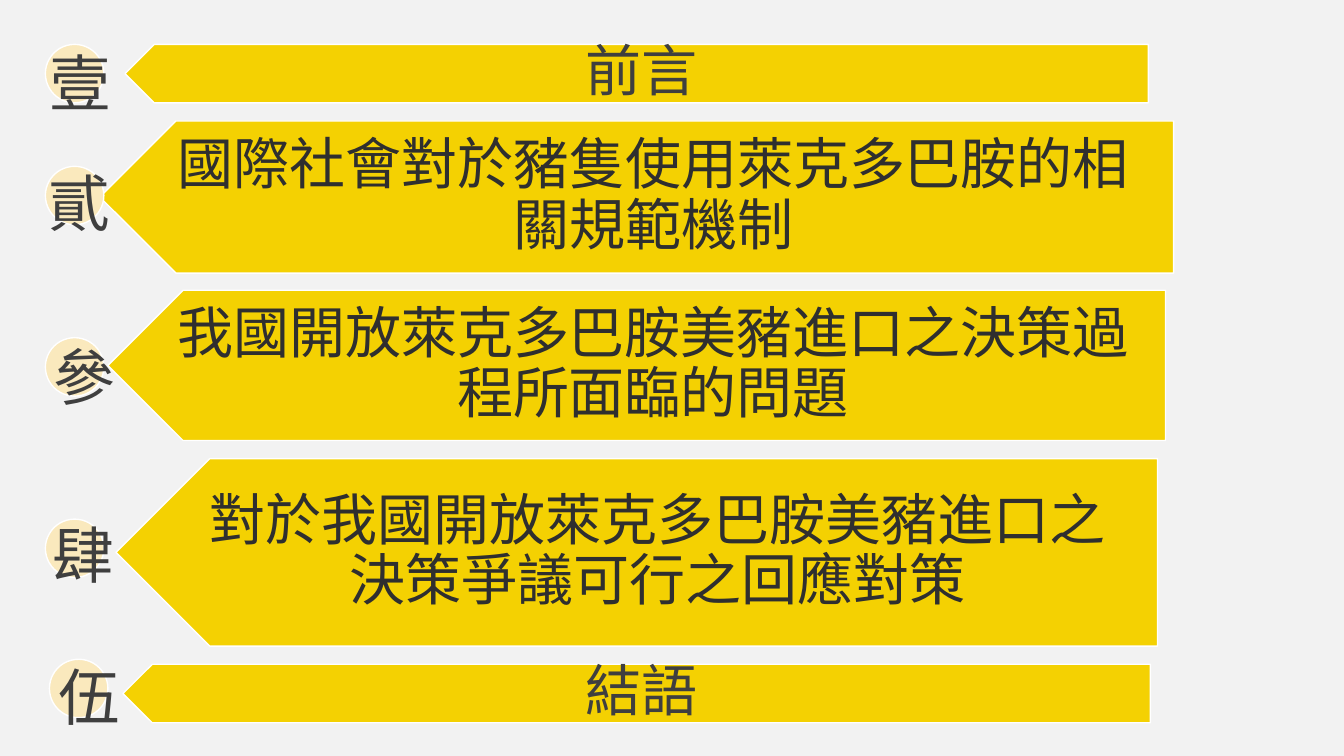
from pptx import Presentation
from pptx.dml.color import RGBColor
from pptx.enum.shapes import MSO_SHAPE
from pptx.enum.text import MSO_ANCHOR, MSO_AUTO_SIZE, PP_ALIGN
from pptx.oxml.ns import qn
from pptx.util import Inches, Pt
from lxml.etree import SubElement

COLOURS = {
    "background": "F2F2F2",
    "banner": "F4D102",
    "dot": "FAE9BD",
    "outline": "FFFFFF",
    "label": "3F3F3F",
    "heading": "2F2F2F",
}
CJK_FONT = "Noto Sans CJK SC"
DOT_SIZE = 0.58

CHAPTERS = [
    ("壹", (0.39, 0.40, 1.11), (0.45, 0.44), (1.24, 0.44, 10.15, 0.58),
     "前言", CJK_FONT, "label"),
    ("貳", (0.38, 1.59, 0.69), (0.45, 1.65), (0.99, 1.20, 10.65, 1.51),
     "國際社會對於豬隻使用萊克多巴胺的相關規範機制", "Arial", "heading"),
    ("參", (0.43, 3.31, 0.69), (0.45, 3.35), (1.07, 2.88, 10.49, 1.49),
     "我國開放萊克多巴胺美豬進口之決策過程所面臨的問題", "Arial", "heading"),
    ("肆", (0.42, 5.08, 0.69), (0.45, 5.15), (1.15, 4.55, 10.33, 1.86),
     "對於我國開放萊克多巴胺美豬進口之決策爭議可行之回應對策", "Arial", "heading"),
    ("伍", (0.48, 6.49, 0.69), (0.49, 6.54), (1.22, 6.59, 10.19, 0.58),
     "結語", CJK_FONT, "label"),
]


class AgendaSlide:
    """Draws the agenda elements in one style on the current page."""

    def __init__(self, page):
        self.page = page
        fill = page.background.fill
        fill.solid()
        fill.fore_color.rgb = self.colour("background")

    def colour(self, name):
        return RGBColor.from_string(COLOURS[name])

    def shape(self, kind, place, fill, rotation=0):
        shape = self.page.shapes.add_shape(kind, *map(Inches, place))
        shape.rotation = rotation
        shape.shadow.inherit = False
        shape.fill.solid()
        shape.fill.fore_color.rgb = self.colour(fill)
        shape.line.color.rgb = self.colour("outline")
        shape.line.width = Pt(1)

    def text(self, place, words, size, font, colour):
        box = self.page.shapes.add_textbox(*map(Inches, place))
        frame = box.text_frame
        frame.word_wrap = True
        para = frame.paragraphs[0]
        span = para.add_run()
        span.text = words
        span.font.size = Pt(size)
        span.font.name = font
        span.font.color.rgb = self.colour(colour)
        east_asian = SubElement(span.font._element, qn("a:ea"))
        east_asian.set("typeface", CJK_FONT)
        return frame, para

    def banner(self, place, words, font, colour):
        left, top, width, height = place
        self.shape(MSO_SHAPE.PENTAGON, place, "banner", rotation=180)
        inset = height / 4
        frame, para = self.text(
            (left + inset, top, width - inset, height), words, 40, font, colour)
        frame.vertical_anchor = MSO_ANCHOR.MIDDLE
        frame.margin_left, frame.margin_right = Inches(0.26), Inches(0.31)
        frame.margin_top = frame.margin_bottom = Inches(0.17)
        para.alignment = PP_ALIGN.CENTER
        para.line_spacing = 0.9

    def dot(self, left, top):
        self.shape(MSO_SHAPE.OVAL, (left, top, DOT_SIZE, DOT_SIZE), "dot")

    def numeral(self, left, top, width, words):
        frame, _ = self.text((left, top, width, 0.84), words, 44, CJK_FONT, "label")
        frame.auto_size = MSO_AUTO_SIZE.SHAPE_TO_FIT_TEXT


def main():
    deck = Presentation()
    deck.slide_width, deck.slide_height = Inches(13.33), Inches(7.5)
    agenda = AgendaSlide(deck.slides.add_slide(deck.slide_layouts[6]))
    for numeral, numeral_place, dot_place, banner_place, words, font, colour in CHAPTERS:
        agenda.banner(banner_place, words, font, colour)
        agenda.dot(*dot_place)
        agenda.numeral(*numeral_place, numeral)
    deck.save("out.pptx")


if __name__ == "__main__":
    main()
